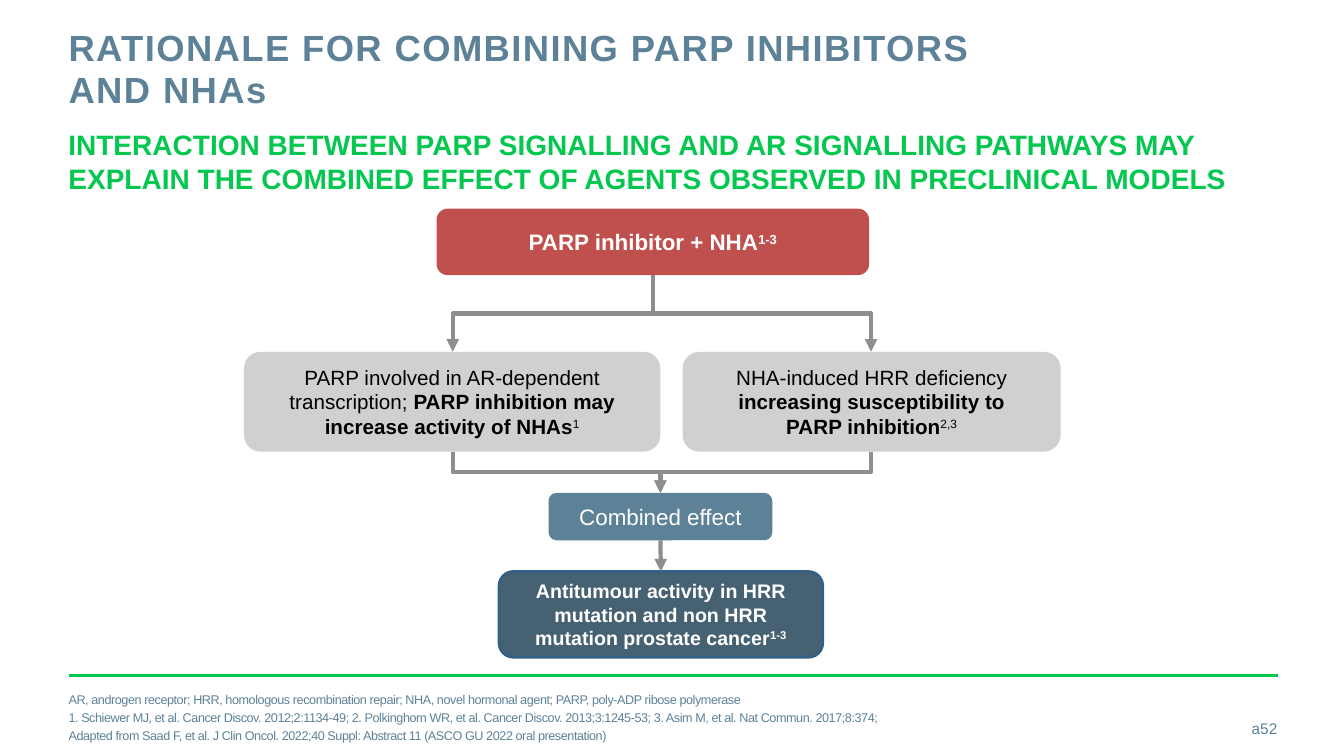
from lxml import etree
from pptx import Presentation
from pptx.dml.color import RGBColor
from pptx.enum.shapes import MSO_CONNECTOR, MSO_SHAPE
from pptx.enum.text import MSO_ANCHOR, PP_ALIGN
from pptx.oxml.ns import qn
from pptx.util import Inches, Pt

ROUNDED = MSO_SHAPE.ROUNDED_RECTANGLE
STRAIGHT, ELBOW = MSO_CONNECTOR.STRAIGHT, MSO_CONNECTOR.ELBOW
TOP, MIDDLE = MSO_ANCHOR.TOP, MSO_ANCHOR.MIDDLE
LEFT, CENTER, RIGHT = PP_ALIGN.LEFT, PP_ALIGN.CENTER, PP_ALIGN.RIGHT

COLORS = {
    "slate": "5D8298", "green": "03C74F", "red": "C0504D", "light": "D1CFD1",
    "dark": "466172", "outline": "336084", "arrow": "8C8F8F",
    "white": "FFFFFF", "black": "000000",
}
COLORS = {name: RGBColor.from_string(value) for name, value in COLORS.items()}

deck = Presentation()
deck.slide_width, deck.slide_height = Inches(13.33), Inches(7.5)
page = deck.slides.add_slide(deck.slide_layouts[6])


def write(box, paragraphs, size, color, align, anchor, margins=(0, 0), spacing=0):
    """Fill a box; each paragraph is a list of (text, style), style from "b" and "^"."""
    frame = box.text_frame
    frame.word_wrap = True
    frame.vertical_anchor = anchor
    frame.margin_left = frame.margin_right = Inches(margins[0])
    frame.margin_top = frame.margin_bottom = Inches(margins[1])
    for index, spans in enumerate(paragraphs):
        paragraph = frame.add_paragraph() if index else frame.paragraphs[0]
        paragraph.alignment = align
        for text, style in spans:
            span = paragraph.add_run()
            span.text = text
            span.font.name, span.font.size = "Arial", Pt(size)
            span.font.bold = "b" in style
            span.font.color.rgb = COLORS[color]
            properties = span._r.get_or_add_rPr()
            if spacing:
                properties.set("spc", str(spacing))
            if "^" in style:
                properties.set("baseline", "30000")


def style_line(line, color, width, arrow=False):
    line.line.color.rgb = COLORS[color]
    line.line.width = Pt(width)
    properties = line._element.spPr
    if arrow:
        etree.SubElement(line.line._get_or_add_ln(), qn("a:tailEnd"), type="triangle")
    etree.SubElement(properties, qn("a:effectLst"))


# Title, subtitle, footnotes and page number
title = page.shapes.add_textbox(Inches(0.68), Inches(0.27), Inches(9.56), Inches(0.88))
write(title, [[("RATIONALE FOR COMBINING PARP INHIBITORS AND NHAs", "b")]],
      26, "slate", LEFT, TOP, spacing=100)
title.text_frame.paragraphs[0].line_spacing = Pt(30)

subtitle = page.shapes.add_textbox(Inches(0.58), Inches(1.22), Inches(12.17), Inches(0.77))
write(subtitle, [[("INTERACTION BETWEEN PARP SIGNALLING AND AR SIGNALLING PATHWAYS MAY "
                   "EXPLAIN THE COMBINED EFFECT OF AGENTS OBSERVED IN PRECLINICAL MODELS", "b")]],
      20, "green", LEFT, TOP, (0.1, 0.05))

footnotes = [
    "AR, androgen receptor; HRR, homologous recombination repair; NHA, novel hormonal agent; "
    "PARP, poly-ADP ribose polymerase",
    "1. Schiewer MJ, et al. Cancer Discov. 2012;2:1134-49; 2. Polkinghorn WR, et al. Cancer Discov. "
    "2013;3:1245-53; 3. Asim M, et al. Nat Commun. 2017;8:374;",
    "Adapted from Saad F, et al. J Clin Oncol. 2022;40 Suppl: Abstract 11 "
    "(ASCO GU 2022 oral presentation)",
]
footer = page.shapes.add_textbox(Inches(0.68), Inches(6.92), Inches(12.05), Inches(0.4))
write(footer, [[(note, "")] for note in footnotes], 9, "slate", LEFT, MIDDLE, spacing=-30)
for paragraph in footer.text_frame.paragraphs[1:]:
    paragraph.space_before = Pt(2)

number = page.shapes.add_textbox(Inches(11.81), Inches(7.03), Inches(0.86), Inches(0.4))
write(number, [[("a52", "")]], 11, "slate", RIGHT, MIDDLE)

footer_rule = page.shapes.add_connector(STRAIGHT, Inches(0.68), Inches(6.7), Inches(12.68), Inches(6.7))
style_line(footer_rule, "green", 2)

# Elbow arrows: start x, start y, end x, end y
for x1, y1, x2, y2 in [
    (6.48, 2.73, 4.49, 3.49), (6.48, 2.73, 8.64, 3.49),
    (4.49, 4.48, 6.55, 4.89), (8.64, 4.48, 6.55, 4.89),
]:
    # Laid out sideways about its centre, then turned to run downwards
    middle_x, middle_y = (x1 + x2) / 2, (y1 + y2) / 2
    half_width, half_height = (y2 - y1) / 2, abs(x2 - x1) / 2
    rightward = x2 > x1
    if rightward:
        half_width = -half_width
    elbow = page.shapes.add_connector(
        ELBOW, Inches(middle_x - half_width), Inches(middle_y - half_height),
        Inches(middle_x + half_width), Inches(middle_y + half_height))
    elbow._element.spPr.find(qn("a:xfrm")).set("rot", "16200000" if rightward else "5400000")
    style_line(elbow, "arrow", 3, arrow=True)

# Flow boxes: position, fill, text colour, text size, margins, paragraphs
boxes = {
    "therapy": ((4.33, 2.07, 4.29, 0.66), "red", "white", 16, (0.05, 0.05),
                [[("PARP inhibitor + NHA", "b"), ("1-3", "b^")]]),
    "transcription": ((2.42, 3.49, 4.13, 0.99), "light", "black", 14.7, (0.1, 0.05),
                      [[("PARP involved in AR-dependent transcription; ", ""),
                        ("PARP inhibition may increase activity of NHAs", "b"), ("1", "^")]]),
    "deficiency": ((6.77, 3.49, 3.75, 0.99), "light", "black", 14.7, (0.1, 0.05),
                   [[("NHA-induced HRR deficiency ", ""), ("increasing susceptibility to", "b")],
                    [("PARP inhibition", "b"), ("2,3", "^")]]),
    "combined": ((5.44, 4.89, 2.22, 0.47), "slate", "white", 16, (0.1, 0.05),
                 [[("Combined effect", "")]]),
    "activity": ((4.95, 5.67, 3.21, 0.85), "dark", "white", 14, (0.1, 0.05),
                 [[("Antitumour activity in HRR mutation and non HRR mutation prostate cancer", "b"),
                   ("1-3", "b^")]]),
}
flow = {}
for name, (place, fill, color, size, margins, paragraphs) in boxes.items():
    box = page.shapes.add_shape(ROUNDED, *map(Inches, place))
    box.shadow.inherit = False
    box.fill.solid()
    box.fill.fore_color.rgb = COLORS[fill]
    box.line.fill.background()
    write(box, paragraphs, size, color, CENTER, MIDDLE, margins)
    flow[name] = box
flow["activity"].line.color.rgb = COLORS["outline"]
flow["activity"].line.width = Pt(2)

# Arrow from the combined effect to the outcome
result_arrow = page.shapes.add_connector(STRAIGHT, Inches(6.55), Inches(5.36), Inches(6.55), Inches(5.67))
result_arrow.begin_connect(flow["combined"], 2)
result_arrow.end_connect(flow["activity"], 0)
style_line(result_arrow, "arrow", 3, arrow=True)

deck.save("out.pptx")
